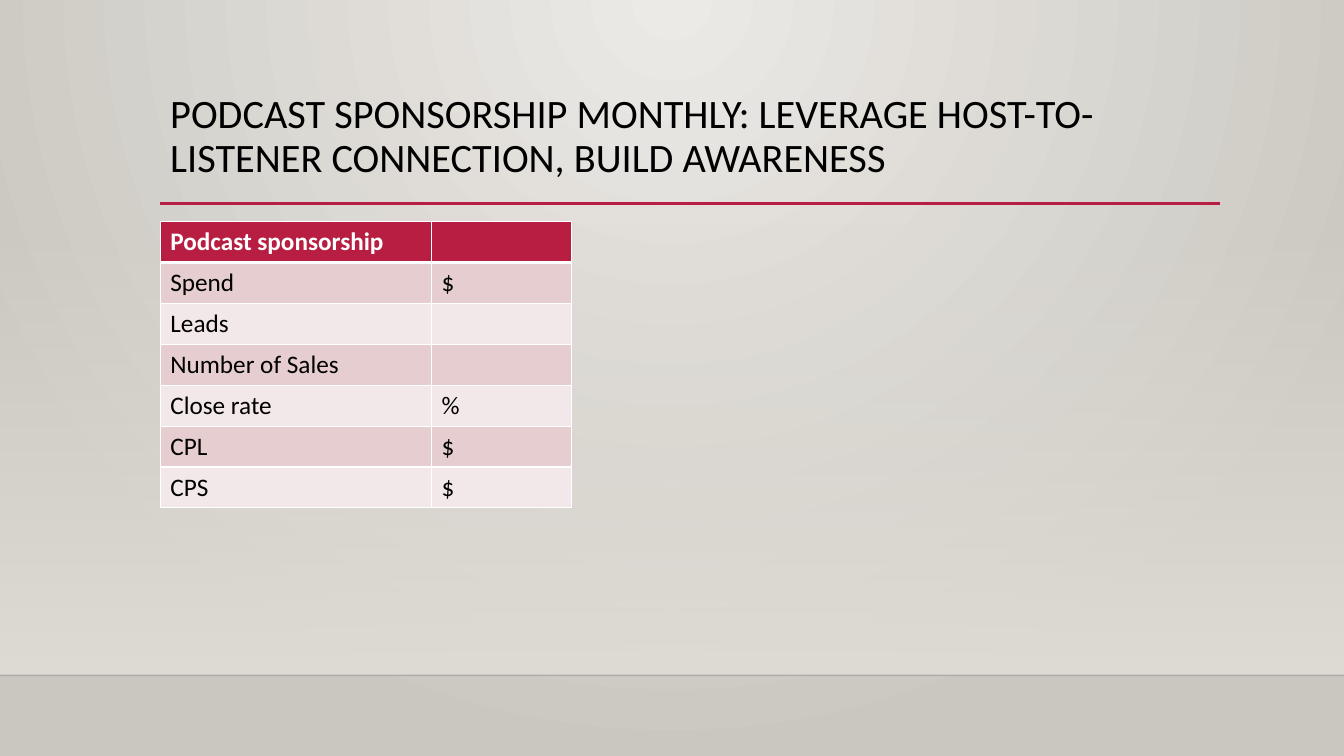
from lxml import etree
from pptx import Presentation
from pptx.dml.color import RGBColor as RGB
from pptx.enum.shapes import MSO_CONNECTOR as Conn, MSO_SHAPE as Shape
from pptx.enum.text import MSO_ANCHOR as Anchor
from pptx.oxml import parse_xml
from pptx.oxml.ns import nsdecls, qn
from pptx.util import Inches, Pt

HUES = {
    "red": "B71E42", "white": "FFFFFF", "black": "000000", "edge": "000001",
    "rose": "E6CDCF", "pale": "F3E8E9",
    "light": "ECEAE7", "dark": "CAC7C1", "floor": "DFDBD5",
}

deck = Presentation()
deck.slide_width, deck.slide_height = Inches(13.33), Inches(7.5)
slide = deck.slides.add_slide(deck.slide_layouts[6])
left, wide, floor = Inches(1.59), Inches(10.5), Inches(6.7)


def write(frame, text, size=18, hue="black", bold=False, gap=None):
    para = frame.paragraphs[0]
    para.line_spacing = gap
    para.font.size = Pt(size)
    run = para.add_run()
    run.text = text
    font = run.font
    font.name, font.size, font.bold = "Calibri", Pt(size), bold
    font.color.rgb = RGB.from_string(HUES[hue])


def blend(start, end, alpha, shade):
    return parse_xml(
        f'<a:gradFill {nsdecls("a")} rotWithShape="1"><a:gsLst>'
        f'<a:gs pos="0"><a:srgbClr val="{HUES[start]}">'
        f'<a:alpha val="{alpha}000"/></a:srgbClr></a:gs>'
        f'<a:gs pos="100000"><a:srgbClr val="{HUES[end]}"/></a:gs>'
        f'</a:gsLst>{shade}</a:gradFill>')


# Background: a glow from the top centre
slide.background.fill.solid()
solid = slide.element.find(".//" + qn("p:bgPr")).find(qn("a:solidFill"))
solid.getparent().replace(solid, blend(
    "light", "dark", 100,
    '<a:path path="circle"><a:fillToRect l="43000" r="43000" b="100000"/></a:path>'))

# Wall that fades in down to the floor line
top = Inches(2.21)
wall = slide.shapes.add_shape(Shape.RECTANGLE, 0, top, deck.slide_width, floor - top)
wall.shadow.inherit = False
wall.line.fill.background()
wall.fill.solid()
solid = wall.element.spPr.find(qn("a:solidFill"))
solid.getparent().replace(solid, blend("floor", "floor", 0, '<a:lin ang="5400000"/>'))

# Floor line and title rule
for x, y, end, hue, size, alpha in [
    (0, floor, deck.slide_width, "edge", 1, 20),
    (left, Inches(2.02), Inches(12.1), "red", 2.5, 100),
]:
    rule = slide.shapes.add_connector(Conn.STRAIGHT, x, y, end, y)
    rule.line.width = Pt(size)
    rule.line.color.rgb = RGB.from_string(HUES[hue])
    tint = rule.element.spPr.find(".//" + qn("a:srgbClr"))
    etree.SubElement(tint, qn("a:alpha"), val=f"{alpha}000")
    etree.SubElement(rule.element.spPr, qn("a:effectLst"))

# Title
title = slide.shapes.add_textbox(left, Inches(0.88), wide, Inches(1.15)).text_frame
title.word_wrap = True
title.vertical_anchor = Anchor.TOP
write(title, "PODCAST SPONSORSHIP MONTHLY: LEVERAGE HOST-TO-LISTENER CONNECTION, "
      "BUILD AWARENESS", size=28.8, gap=0.9)

# Sponsorship table
rows = [("Podcast sponsorship", ""), ("Spend", "$"), ("Leads", ""),
        ("Number of Sales", ""), ("Close rate", "%"), ("CPL", "$"), ("CPS", "$")]
cols = [Inches(2.69), Inches(1.39)]
tall = Inches(2.84) // len(rows)
table = slide.shapes.add_table(
    len(rows), len(cols), left, Inches(2.2), sum(cols), tall * len(rows)).table
table.horz_banding = False
for col, span in zip(table.columns, cols):
    col.width = span
for r, row in enumerate(rows):
    head = r == 0
    for c, text in enumerate(row):
        cell = table.cell(r, c)
        cell.fill.solid()
        hue = "red" if head else ("pale", "rose")[r % 2]
        cell.fill.fore_color.rgb = RGB.from_string(HUES[hue])
        write(cell.text_frame, text, hue="white" if head else "black", bold=head)
        # White borders, thick under the header
        for i, side in enumerate("LRTB"):
            thick = (r, side) in [(0, "B"), (1, "T")]
            cell.fill  # the fill stays after the borders
            cell._tc.get_or_add_tcPr().insert(i, parse_xml(
                f'<a:ln{side} {nsdecls("a")} w="{Pt(3 if thick else 1)}"><a:solidFill>'
                f'<a:srgbClr val="{HUES["white"]}"/></a:solidFill></a:ln{side}>'))

deck.save("out.pptx")
